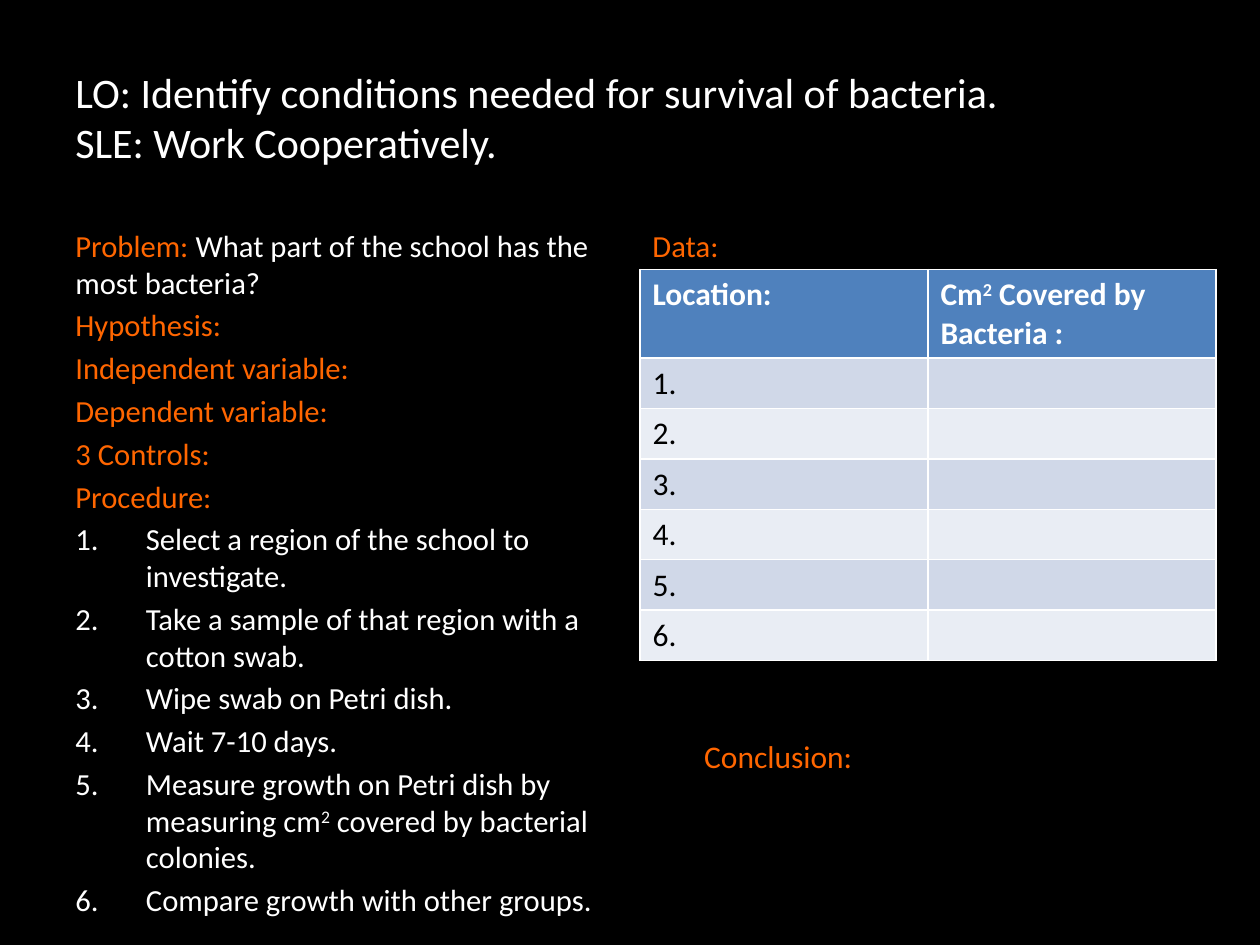
from typing import NamedTuple

from pptx import Presentation
from pptx.dml.color import RGBColor
from pptx.enum.text import MSO_ANCHOR
from pptx.util import Inches, Pt
from pptx.oxml.xmlchemy import OxmlElement

BLACK = RGBColor(0x00, 0x00, 0x00)
WHITE = RGBColor(0xFF, 0xFF, 0xFF)
ORANGE = RGBColor(0xFF, 0x66, 0x00)
HEADER_BLUE = RGBColor(0x4F, 0x81, 0xBD)
BAND_COLORS = (RGBColor(0xD0, 0xD8, 0xE8), RGBColor(0xE9, 0xED, 0xF4))
FONT = "Calibri"
BODY_SIZE = 17.5
TABLE_SIZE = 18


class Piece(NamedTuple):
    text: str
    color: RGBColor = WHITE
    superscript: bool = False


class Line(NamedTuple):
    pieces: list[Piece]
    numbered: bool = False


HEADINGS = ["Hypothesis:", "Independent variable:", "Dependent variable:",
            "3 Controls:", "Procedure:"]
STEPS = [
    [Piece("Select a region of the school to investigate.")],
    [Piece("Take a sample of that region with a cotton swab.")],
    [Piece("Wipe swab on Petri dish.")],
    [Piece("Wait 7-10 days.")],
    [Piece("Measure growth on Petri dish by measuring cm"),
     Piece("2", superscript=True),
     Piece(" covered by bacterial colonies.")],
    [Piece("Compare growth with other groups.")],
]
PROBLEM = [Piece("Problem: ", ORANGE),
           Piece("What part of the school has the most bacteria?")]
PLAN = ([Line(PROBLEM)]
        + [Line([Piece(heading, ORANGE)]) for heading in HEADINGS]
        + [Line(step, numbered=True) for step in STEPS])
TABLE_HEADER = [
    [Piece("Location:")],
    [Piece("Cm"), Piece("2", superscript=True), Piece(" Covered by Bacteria :")],
]
SAMPLE_COUNT = 6


def add_pieces(paragraph, pieces: list[Piece], size: float, bold: bool = False) -> None:
    for piece in pieces:
        run = paragraph.add_run()
        run.text = piece.text
        run.font.name = FONT
        run.font.size = Pt(size)
        run.font.bold = bold
        run.font.color.rgb = piece.color
        if piece.superscript:
            run._r.get_or_add_rPr().set("baseline", "30000")


def number_paragraph(paragraph) -> None:
    """Give the paragraph an automatic number and a hanging indent."""
    properties = paragraph._p.get_or_add_pPr()
    properties.set("marL", str(Inches(0.56)))
    properties.set("indent", str(-Inches(0.56)))
    numbering = OxmlElement("a:buAutoNum")
    numbering.set("type", "arabicPeriod")
    properties.append(numbering)


def add_text_frame(slide, left: float, top: float, width: float, height: float,
                   wrap: bool = True):
    box = slide.shapes.add_textbox(Inches(left), Inches(top),
                                   Inches(width), Inches(height))
    box.text_frame.word_wrap = wrap
    return box.text_frame


def add_title(slide) -> None:
    frame = add_text_frame(slide, 0.5, 0.3, 9, 1.25)
    frame.vertical_anchor = MSO_ANCHOR.MIDDLE
    paragraph = frame.paragraphs[0]
    add_pieces(paragraph,
               [Piece("LO: Identify conditions needed for survival of bacteria. ")], 24)
    paragraph.add_line_break()
    add_pieces(paragraph, [Piece("SLE: Work Cooperatively.")], 24)


def add_column(slide, left: float, lines: list[Line]) -> None:
    frame = add_text_frame(slide, left, 1.75, 4.42, 4.95)
    for index, line in enumerate(lines):
        paragraph = frame.add_paragraph() if index else frame.paragraphs[0]
        paragraph.space_before = Pt(BODY_SIZE * 0.2)
        if line.numbered:
            number_paragraph(paragraph)
        add_pieces(paragraph, line.pieces, BODY_SIZE)


def add_data_table(slide) -> None:
    table = slide.shapes.add_table(SAMPLE_COUNT + 1, 2, Inches(5.08), Inches(2.14),
                                   Inches(4.57), Inches(3.1)).table
    for row_index, row in enumerate(table.rows):
        is_header = row_index == 0
        row.height = Inches(0.7 if is_header else 0.4)
        for column_index, cell in enumerate(row.cells):
            cell.fill.solid()
            cell.fill.fore_color.rgb = (HEADER_BLUE if is_header
                                        else BAND_COLORS[(row_index - 1) % 2])
            paragraph = cell.text_frame.paragraphs[0]
            if is_header:
                add_pieces(paragraph, TABLE_HEADER[column_index], TABLE_SIZE, bold=True)
            elif column_index == 0:
                add_pieces(paragraph, [Piece(f"{row_index}.", BLACK)], TABLE_SIZE)


def main() -> None:
    presentation = Presentation()
    presentation.slide_width = Inches(10)
    presentation.slide_height = Inches(7.5)
    slide = presentation.slides.add_slide(presentation.slide_layouts[6])
    slide.background.fill.solid()
    slide.background.fill.fore_color.rgb = BLACK

    add_title(slide)
    add_column(slide, 0.5, PLAN)
    add_column(slide, 5.08, [Line([Piece("Data:", ORANGE)])])
    add_data_table(slide)
    conclusion = add_text_frame(slide, 5.49, 5.8, 1.39, 0.4, wrap=False)
    add_pieces(conclusion.paragraphs[0], [Piece("Conclusion:", ORANGE)], 18)

    presentation.save("out.pptx")


if __name__ == "__main__":
    main()
